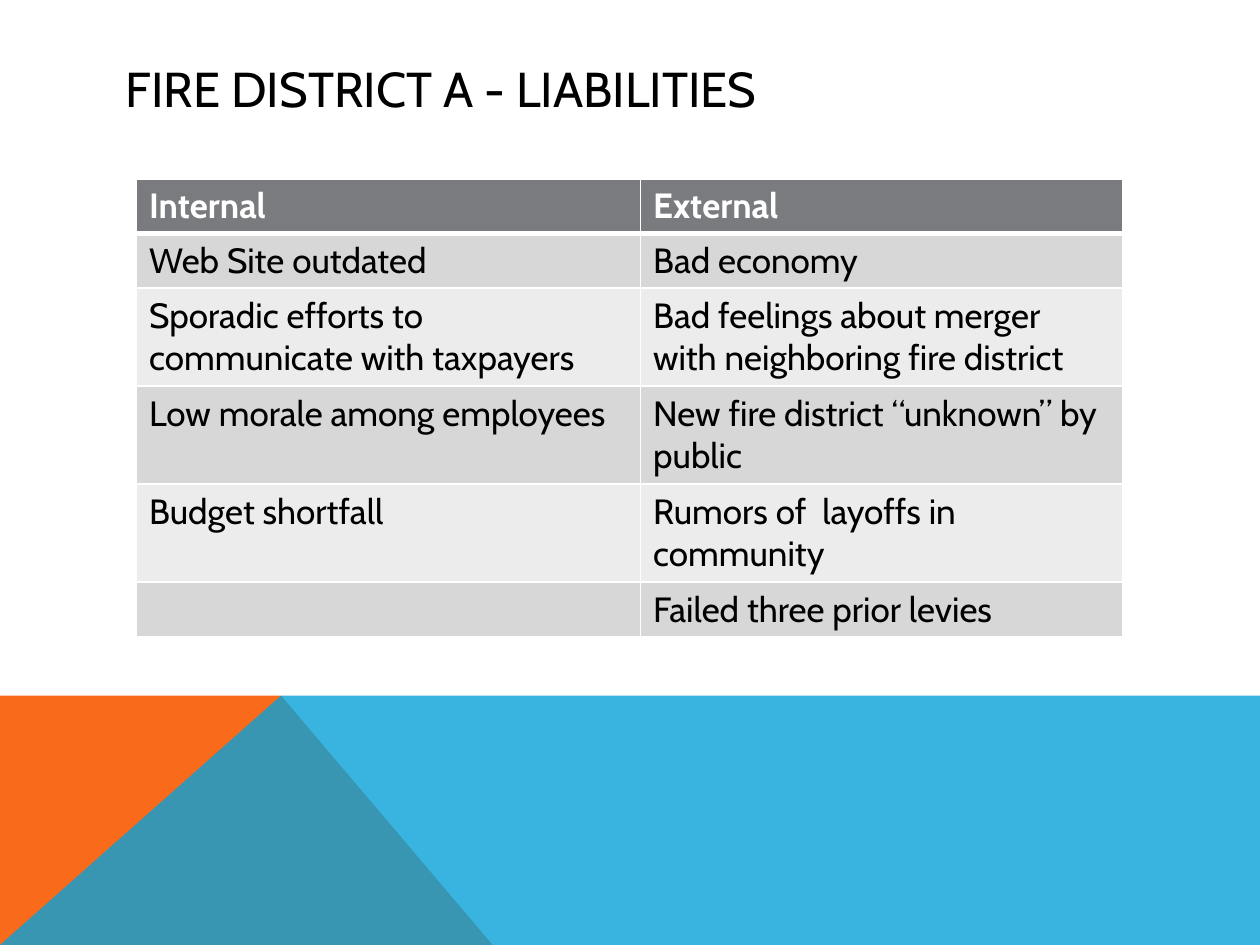
from dataclasses import dataclass

import lxml.etree
import pptx
import pptx.dml.color
import pptx.enum.text
import pptx.oxml.ns
import pptx.util

Pt = pptx.util.Pt

COLORS = {
    "black": "000000",
    "white": "FFFFFF",
    "orange": "F96A1B",
    "blue": "08A1D9",
    "header": "797B7E",
    "dark_band": "D7D7D8",
    "light_band": "ECECEC",
}
FONT = "Cabin"
WIDTH, HEIGHT = 720, 540
BAND_TOP, PEAK = 397.5, 160.6
COLUMN_WIDTHS = (288, 275.8)
ONE_LINE, TWO_LINES = 31.2, 56


@dataclass
class Band:
    color: str
    points: list[tuple[float, float]]
    opacity: int = 100


@dataclass
class Row:
    internal: str
    external: str
    height: float


BANDS = [
    Band("orange", [(0, HEIGHT), (0, BAND_TOP), (PEAK, BAND_TOP), (281.5, HEIGHT)]),
    Band("blue", [(0, HEIGHT), (PEAK, BAND_TOP), (WIDTH, BAND_TOP), (WIDTH, HEIGHT)], 80),
]
ROWS = [
    Row("Internal", "External", ONE_LINE),
    Row("Web Site outdated", "Bad economy", ONE_LINE),
    Row("Sporadic efforts to communicate with taxpayers",
        "Bad feelings about merger with neighboring fire district", TWO_LINES),
    Row("Low morale among employees", "New fire district “unknown” by public", TWO_LINES),
    Row("Budget shortfall", "Rumors of  layoffs in community", TWO_LINES),
    Row("", "Failed three prior levies", ONE_LINE),
]


def rgb(name: str) -> pptx.dml.color.RGBColor:
    return pptx.dml.color.RGBColor.from_string(COLORS[name])


def add_element(parent, tag: str, **attributes: str):
    return lxml.etree.SubElement(parent, pptx.oxml.ns.qn(tag), **attributes)


def format_text(text_frame, size: float, color: str, bold: bool = False) -> None:
    for paragraph in text_frame.paragraphs:
        for run in paragraph.runs:
            run.font.name = FONT
            run.font.size = Pt(size)
            run.font.bold = bold
            run.font.color.rgb = rgb(color)


def draw_band(slide, band: Band) -> None:
    points = [(Pt(x), Pt(y)) for x, y in band.points]
    builder = slide.shapes.build_freeform(*points[0])
    builder.add_line_segments(points[1:], close=True)
    shape = builder.convert_to_shape()
    shape.shadow.inherit = False
    shape.fill.solid()
    shape.fill.fore_color.rgb = rgb(band.color)
    shape.line.fill.background()
    if band.opacity < 100:
        color = shape.element.spPr.find(".//" + pptx.oxml.ns.qn("a:srgbClr"))
        add_element(color, "a:alpha", val=str(band.opacity * 1000))


def draw_title(slide, text: str) -> None:
    box = slide.shapes.add_textbox(Pt(64.8), Pt(28.8), Pt(592), Pt(43.2))
    text_frame = box.text_frame
    text_frame.word_wrap = True
    text_frame.vertical_anchor = pptx.enum.text.MSO_ANCHOR.MIDDLE
    text_frame.text = text
    format_text(text_frame, 28, "black")


def set_borders(cell, bottom_width: float) -> None:
    properties = cell._tc.get_or_add_tcPr()
    for side in "LRTB":
        width = bottom_width if side == "B" else 1
        line = add_element(properties, f"a:ln{side}", w=str(Pt(width)))
        fill = add_element(line, "a:solidFill")
        add_element(fill, "a:srgbClr", val=COLORS["white"])


def draw_table(slide, rows: list[Row]) -> None:
    frame = slide.shapes.add_table(
        len(rows), len(COLUMN_WIDTHS), Pt(78), Pt(102.2),
        Pt(sum(COLUMN_WIDTHS)), Pt(sum(row.height for row in rows)))
    table = frame.table
    for column, width in zip(table.columns, COLUMN_WIDTHS):
        column.width = Pt(width)
    for index, row in enumerate(rows):
        table.rows[index].height = Pt(row.height)
        is_header = index == 0
        band = "header" if is_header else "dark_band" if index % 2 else "light_band"
        for cell, text in zip(table.rows[index].cells, (row.internal, row.external)):
            set_borders(cell, 3 if is_header else 1)
            cell.fill.solid()
            cell.fill.fore_color.rgb = rgb(band)
            cell.text_frame.text = text
            format_text(cell.text_frame, 20, "white" if is_header else "black", is_header)


def main() -> None:
    presentation = pptx.Presentation()
    presentation.slide_width, presentation.slide_height = Pt(WIDTH), Pt(HEIGHT)
    slide = presentation.slides.add_slide(presentation.slide_layouts[6])

    # Coloured bands along the bottom
    for band in BANDS:
        draw_band(slide, band)

    # Title and table of liabilities
    draw_title(slide, "FIRE DISTRICT A - LIABILITIES")
    draw_table(slide, ROWS)

    presentation.save("out.pptx")


if __name__ == "__main__":
    main()
